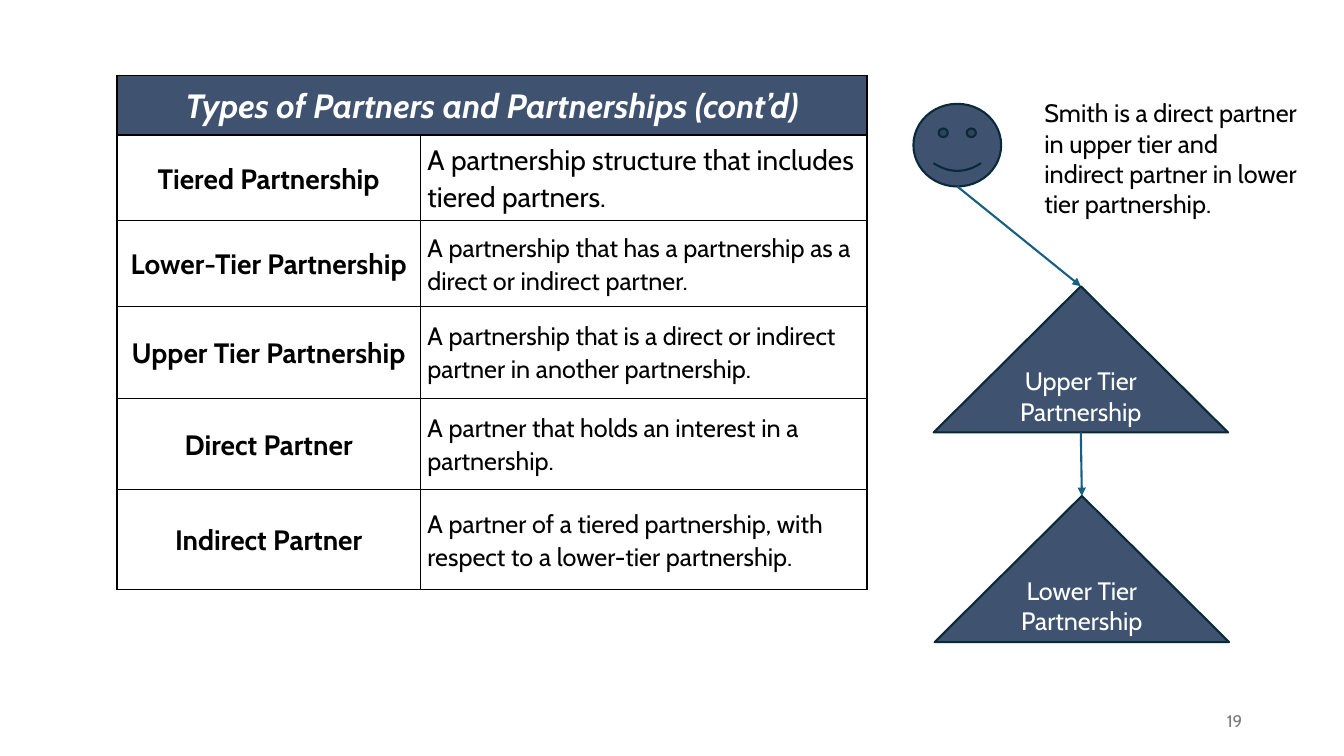
from lxml import etree
from pptx import Presentation
from pptx.dml.color import RGBColor
from pptx.enum import shapes, text
from pptx.oxml import ns
from pptx.util import Inches, Pt

FONT = "Cabin"
NAVY, OUTLINE, ARROW = "3F5371", "092A39", "156082"
BLACK, WHITE, GREY = "000000", "FFFFFF", "797979"
LEFT, CENTER, RIGHT = text.PP_ALIGN.LEFT, text.PP_ALIGN.CENTER, text.PP_ALIGN.RIGHT
MIDDLE, TOP = text.MSO_ANCHOR.MIDDLE, text.MSO_ANCHOR.TOP

TITLE = "Types of Partners and Partnerships (cont’d)"
DEFINITIONS = [
    ("Tiered Partnership", "A partnership structure that includes tiered partners.", 20),
    ("Lower-Tier Partnership", "A partnership that has a partnership as a direct or indirect partner.", 18),
    ("Upper Tier Partnership", "A partnership that is a direct or indirect partner in another partnership.", 18),
    ("Direct Partner", "A partner that holds an interest in a partnership.", 18),
    ("Indirect Partner", "A partner of a tiered partnership, with respect to a lower-tier partnership.", 18),
]
COLUMN_WIDTHS = [3.01, 4.43]
ROW_HEIGHTS = [0.59, 0.85, 0.85, 0.91, 0.91, 0.99]


def color(value):
    """Turn a hex string into a colour."""
    return RGBColor.from_string(value)


def write(frame, content, size, ink, align=LEFT, bold=False, italic=False):
    """Write one styled paragraph and return it."""
    frame.word_wrap = True
    paragraph = frame.paragraphs[0]
    paragraph.text = content
    paragraph.alignment = align
    font = paragraph.font
    font.name, font.size, font.bold, font.italic = FONT, Pt(size), bold, italic
    font.color.rgb = color(ink)
    return paragraph


def add_borders(cell):
    """Draw a thin black line on every side of a cell."""
    properties = cell._tc.get_or_add_tcPr()
    for position, side in enumerate(("lnL", "lnR", "lnT", "lnB")):
        line = etree.Element(ns.qn(f"a:{side}"), w=str(Pt(1)))
        fill = etree.SubElement(line, ns.qn("a:solidFill"))
        etree.SubElement(fill, ns.qn("a:srgbClr"), val=BLACK)
        properties.insert(position, line)


def fill_cell(cell, content, size, ink=BLACK, **style):
    """Write a table cell with the table's paragraph spacing."""
    paragraph = write(cell.text_frame, content, size, ink, **style)
    paragraph.line_spacing = 1.07
    paragraph.space_after = Pt(6)


def add_definitions(slide):
    """Add the table of partnership terms."""
    frame = slide.shapes.add_table(
        len(ROW_HEIGHTS), len(COLUMN_WIDTHS), Inches(1.16), Inches(0.75),
        Inches(sum(COLUMN_WIDTHS)), Inches(sum(ROW_HEIGHTS)))
    table = frame.table
    table.first_row = table.horz_banding = False
    for column, width in zip(table.columns, COLUMN_WIDTHS):
        column.width = Inches(width)
    for row, height in zip(table.rows, ROW_HEIGHTS):
        row.height = Inches(height)
    for cell in table.iter_cells():
        cell.margin_left = cell.margin_right = Inches(0.07)
        cell.margin_top = cell.margin_bottom = 0
        cell.vertical_anchor = MIDDLE
        cell.fill.background()
        add_borders(cell)
    header = table.cell(0, 0)
    header.merge(table.cell(0, 1))
    header.fill.solid()
    header.fill.fore_color.rgb = color(NAVY)
    fill_cell(header, TITLE, 24, WHITE, align=CENTER, bold=True, italic=True)
    for row, (term, meaning, size) in enumerate(DEFINITIONS, 1):
        fill_cell(table.cell(row, 0), term, 20, align=CENTER, bold=True)
        fill_cell(table.cell(row, 1), meaning, size)


def add_figure(slide, kind, left, top, width, height, label=""):
    """Add a navy preset shape with an optional label."""
    shape = slide.shapes.add_shape(
        kind, Inches(left), Inches(top), Inches(width), Inches(height))
    shape.shadow.inherit = False
    shape.fill.solid()
    shape.fill.fore_color.rgb = color(NAVY)
    shape.line.color.rgb = color(OUTLINE)
    shape.line.width = Pt(1.5)
    if label:
        shape.text_frame.vertical_anchor = MIDDLE
        write(shape.text_frame, label, 18, WHITE, CENTER)
    return shape


def add_arrow(slide, source, target):
    """Add an arrow from the bottom of one shape to the top of another."""
    start = source.left + source.width // 2, source.top + source.height
    connector = slide.shapes.add_connector(
        shapes.MSO_CONNECTOR.STRAIGHT, *start, target.left, target.top)
    connector.end_connect(target, 0)
    connector.line.color.rgb = color(ARROW)
    connector.line.width = Pt(1.5)
    etree.SubElement(connector.line._get_or_add_ln(), ns.qn("a:tailEnd"), type="triangle")
    etree.SubElement(connector._element.spPr, ns.qn("a:effectLst"))


def add_text(slide, left, top, width, height, content, size, ink, align=LEFT, anchor=TOP):
    """Add a wrapped text box."""
    box = slide.shapes.add_textbox(
        Inches(left), Inches(top), Inches(width), Inches(height))
    box.text_frame.vertical_anchor = anchor
    write(box.text_frame, content, size, ink, align)


def main():
    """Build and save the slide."""
    presentation = Presentation()
    presentation.slide_width = Inches(13.33)
    presentation.slide_height = Inches(7.5)
    slide = presentation.slides.add_slide(presentation.slide_layouts[6])
    add_definitions(slide)
    triangle = shapes.MSO_SHAPE.ISOSCELES_TRIANGLE
    lower = add_figure(slide, triangle, 9.27, 4.92, 2.92, 1.45, "Lower Tier Partnership")
    upper = add_figure(slide, triangle, 9.26, 2.84, 2.92, 1.45, "Upper Tier Partnership")
    smith = add_figure(slide, shapes.MSO_SHAPE.SMILEY_FACE, 9.06, 1.03, 0.87, 0.82)
    add_arrow(slide, smith, upper)
    add_arrow(slide, upper, lower)
    add_text(slide, 10.26, 0.92, 2.75, 1.31,
             "Smith is a direct partner in upper tier and indirect partner in lower tier partnership.",
             18, BLACK)
    add_text(slide, 9.42, 6.95, 3, 0.4, "19", 12, GREY, RIGHT, MIDDLE)
    presentation.save("out.pptx")


if __name__ == "__main__":
    main()
